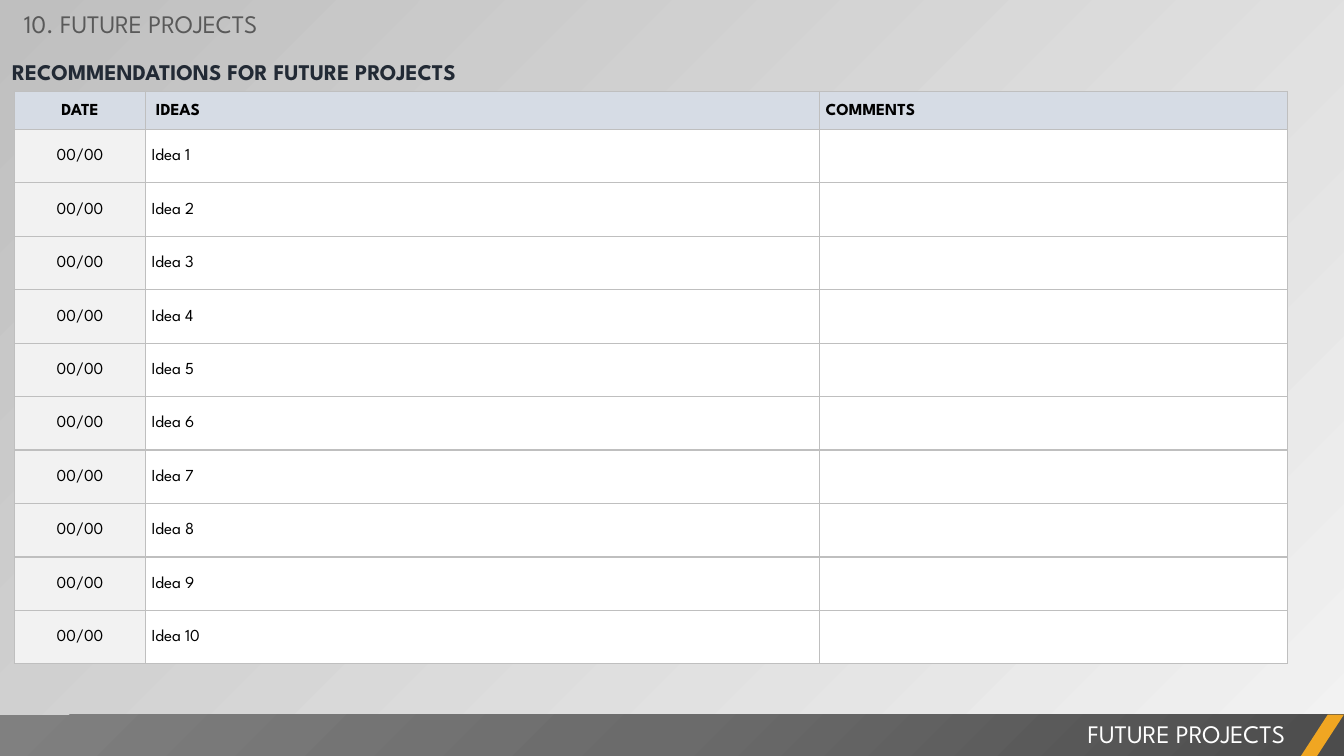
"""Build the slide that lists recommendations for future projects."""
import copy

import lxml.etree
import pptx
import pptx.dml.color
import pptx.enum.shapes
import pptx.enum.text
import pptx.oxml.ns
import pptx.util

Pt = pptx.util.Pt
RGBColor = pptx.dml.color.RGBColor
PP_ALIGN = pptx.enum.text.PP_ALIGN
MSO_SHAPE = pptx.enum.shapes.MSO_SHAPE
qn = pptx.oxml.ns.qn

FONT = "League Spartan"
BLACK = RGBColor(0x00, 0x00, 0x00)
WHITE = RGBColor(0xFF, 0xFF, 0xFF)
NAVY = RGBColor(0x22, 0x2A, 0x35)
SLATE = RGBColor(0x59, 0x59, 0x59)
PALE_BLUE = RGBColor(0xD6, 0xDC, 0xE5)
PALE_GREY = RGBColor(0xF2, 0xF2, 0xF2)
MID_GREY = RGBColor(0xBF, 0xBF, 0xBF)
BAND_DARK = RGBColor(0x4C, 0x4C, 0x4C)
BAND_MIDDLE = RGBColor(0x6B, 0x6B, 0x6B)
BAND_LIGHT = RGBColor(0x80, 0x80, 0x80)
AMBER = RGBColor(0xF0, 0xA6, 0x22)

SLIDE_WIDTH, SLIDE_HEIGHT = 960, 540
BAND_TOP, BAND_HEIGHT = 510.4, 30
HEADER_HEIGHT, IDEA_HEIGHT = 27, 38.2
COLUMN_WIDTHS = [93.6, 481.4, 334.4]
ROWS = [["DATE", " IDEAS", "COMMENTS"]]
ROWS += [["00/00", f"Idea {number}", ""] for number in range(1, 11)]


def write(frame, text, size, color, bold=False, align=PP_ALIGN.LEFT):
    frame.word_wrap = True
    frame.text = text
    paragraph = frame.paragraphs[0]
    paragraph.alignment = align
    for run in paragraph.runs:
        run.font.name = FONT
        run.font.size = Pt(size)
        run.font.bold = bold
        run.font.color.rgb = color
    return paragraph


def add_borders(cell):
    properties = cell._tc.get_or_add_tcPr()
    for position, side in enumerate(("a:lnL", "a:lnR", "a:lnT", "a:lnB")):
        border = lxml.etree.Element(qn(side), w=str(Pt(1)))
        fill = lxml.etree.SubElement(border, qn("a:solidFill"))
        lxml.etree.SubElement(fill, qn("a:srgbClr"), val=str(MID_GREY))
        properties.insert(position, border)


presentation = pptx.Presentation()
presentation.slide_width = Pt(SLIDE_WIDTH)
presentation.slide_height = Pt(SLIDE_HEIGHT)
slide = presentation.slides.add_slide(presentation.slide_layouts[6])

backdrop = slide.background.fill
backdrop.gradient()
backdrop.gradient_angle = 135
for stop, color in zip(backdrop.gradient_stops, (PALE_GREY, MID_GREY)):
    stop.color.rgb = color

ideas = slide.shapes.add_table(
    len(ROWS), len(COLUMN_WIDTHS), Pt(10.4), Pt(65.4),
    Pt(sum(COLUMN_WIDTHS)), Pt(HEADER_HEIGHT + 10 * IDEA_HEIGHT)).table
for column, width in zip(ideas.columns, COLUMN_WIDTHS):
    column.width = Pt(width)
for row_index, texts in enumerate(ROWS):
    is_header = row_index == 0
    ideas.rows[row_index].height = Pt(HEADER_HEIGHT if is_header else IDEA_HEIGHT)
    for column_index, text in enumerate(texts):
        is_date = column_index == 0
        cell = ideas.cell(row_index, column_index)
        cell.vertical_anchor = pptx.enum.text.MSO_ANCHOR.MIDDLE
        cell.margin_left = cell.margin_right = Pt(4.3)
        cell.margin_top = cell.margin_bottom = Pt(0)
        cell.fill.solid()
        cell.fill.fore_color.rgb = (
            PALE_BLUE if is_header else PALE_GREY if is_date else WHITE)
        add_borders(cell)
        entry = write(cell.text_frame, text, 12, BLACK, is_header,
                      PP_ALIGN.CENTER if is_date else PP_ALIGN.LEFT)
        entry.line_spacing = 1.07

heading = slide.shapes.add_textbox(Pt(0), Pt(33.1), Pt(602), Pt(29.5)).text_frame
heading.margin_left = heading.margin_right = Pt(8.6)
heading.margin_top = heading.margin_bottom = Pt(4.3)
heading_line = write(heading, "RECOMMENDATIONS FOR FUTURE PROJECTS", 16, NAVY, True)
heading_line.line_spacing = 1.2
heading_line.space_before = Pt(3.2)

section = slide.shapes.add_textbox(Pt(10), Pt(2.2), Pt(382), Pt(29)).text_frame
write(section, "10. FUTURE PROJECTS", 18, SLATE)

band = slide.shapes.add_shape(
    MSO_SHAPE.RECTANGLE, Pt(0), Pt(BAND_TOP), Pt(SLIDE_WIDTH), Pt(BAND_HEIGHT))
band.shadow.inherit = False
band.line.fill.background()
band.fill.gradient()
inner, outer = band.fill.gradient_stops
inner.color.rgb, inner.position = BAND_MIDDLE, 0.5
outer.color.rgb, outer.position = BAND_LIGHT, 1
gradient = band._element.spPr.find(qn("a:gradFill"))
stops = gradient.find(qn("a:gsLst"))
stops.insert(0, copy.deepcopy(stops[0]))
core = band.fill.gradient_stops[0]
core.color.rgb, core.position = BAND_DARK, 0
radial = lxml.etree.Element(qn("a:path"), {"path": "circle"})
lxml.etree.SubElement(radial, qn("a:fillToRect"), l="100000", t="100000")
gradient.replace(gradient.find(qn("a:lin")), radial)

footer = slide.shapes.add_textbox(Pt(378), Pt(509.8), Pt(547), Pt(29)).text_frame
write(footer, "FUTURE PROJECTS", 18, WHITE, align=PP_ALIGN.RIGHT)

slash = slide.shapes.add_shape(
    MSO_SHAPE.PARALLELOGRAM, Pt(929), Pt(BAND_TOP), Pt(31), Pt(BAND_HEIGHT))
slash.adjustments[0] = 0.65
slash.shadow.inherit = False
slash.line.fill.background()
slash.fill.solid()
slash.fill.fore_color.rgb = AMBER

for frame in (heading, section, footer):
    frame.auto_size = pptx.enum.text.MSO_AUTO_SIZE.SHAPE_TO_FIT_TEXT

presentation.save("out.pptx")
